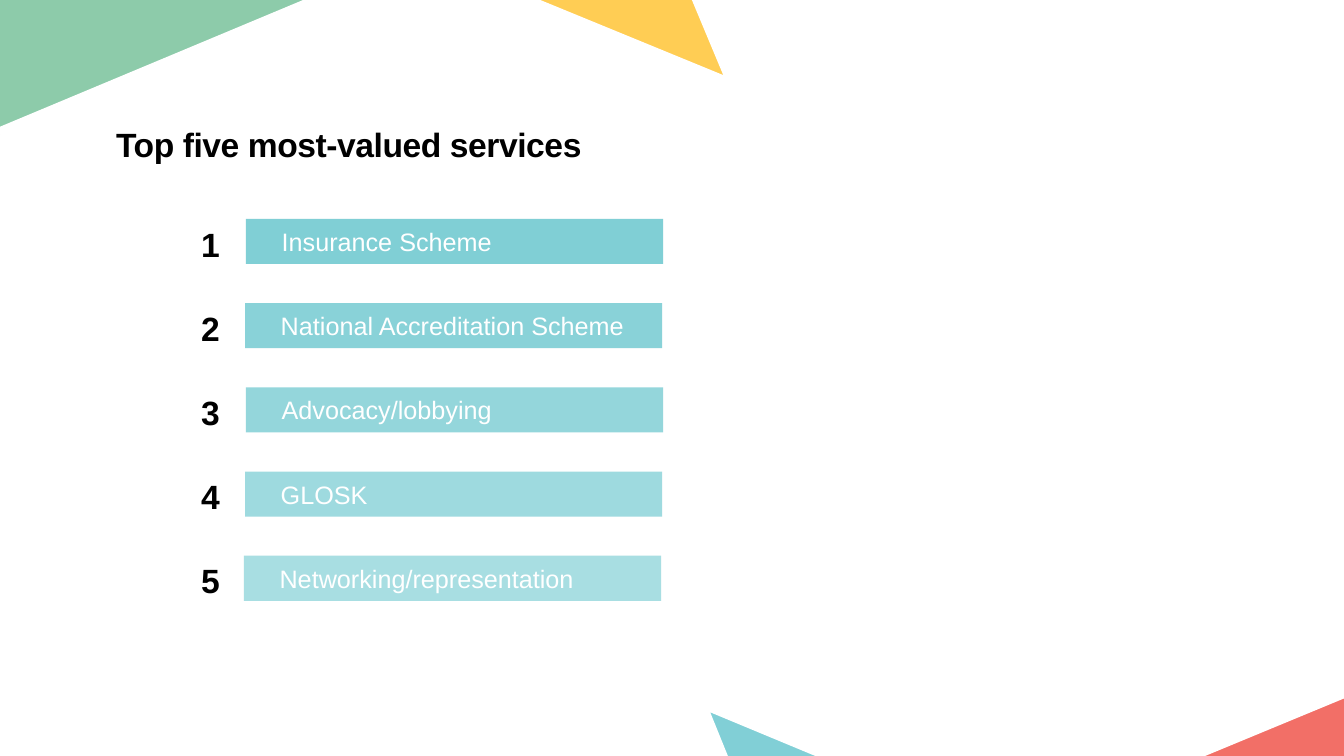
from dataclasses import dataclass
from typing import Any

from lxml.etree import SubElement
from pptx import Presentation
from pptx.dml.color import RGBColor
from pptx.enum.shapes import MSO_SHAPE as Preset
from pptx.enum.text import MSO_ANCHOR as Anchor
from pptx.enum.text import MSO_AUTO_SIZE as Fit
from pptx.enum.text import PP_ALIGN as Align
from pptx.oxml.ns import qn
from pptx.shapes.autoshape import Shape
from pptx.slide import Slide
from pptx.util import Pt

BLACK = RGBColor(0x00, 0x00, 0x00)
WHITE = RGBColor(0xFF, 0xFF, 0xFF)
GREEN = RGBColor(0x8D, 0xCB, 0xAA)
YELLOW = RGBColor(0xFF, 0xCD, 0x54)
TEAL = RGBColor(0x81, 0xCF, 0xD6)
RED = RGBColor(0xF2, 0x6F, 0x67)
BAR = RGBColor(0x80, 0xCF, 0xD5)

Point = tuple[float, float]


@dataclass(frozen=True)
class Corner:
    """A triangle; its first `edge` points carry a white outline."""
    fill: RGBColor
    points: list[Point]
    edge: int
    weight: float


@dataclass(frozen=True)
class Service:
    name: str
    left: float


CORNERS = [
    Corner(GREEN, [(0, 95.8), (236.2, -3), (0, -3)], 2, 9.69),
    Corner(YELLOW, [(365.8, -3), (525.6, 62.6), (498.2, -3)], 3, 9.69),
    Corner(TEAL, [(607.7, 544.3), (496.8, 498.2), (515.5, 544.3)], 3, 11.54),
    Corner(RED, [(960.5, 492.5), (838.8, 542.9), (960.5, 542.9)], 2, 11.54),
]
SERVICES = [
    Service("Insurance Scheme", 175.7),
    Service("National Accreditation Scheme", 175),
    Service("Advocacy/lobbying", 175.7),
    Service("GLOSK", 175),
    Service("Networking/representation", 174.2),
]

TOP, STEP, FADE = 156.4, 60.15, 8  # first bar, row pitch, opacity drop per row

HEAD = {"name": "Arial", "size": Pt(24), "bold": True}
LABEL = {"name": "Arial", "size": Pt(18), "bold": False}
HEAD_BOX = {"margin_left": 0, "margin_top": Pt(0.7), "margin_right": 0,
            "margin_bottom": 0, "vertical_anchor": Anchor.TOP,
            "word_wrap": True, "auto_size": Fit.NONE}
BAR_BOX = {"margin_left": Pt(25.5), "margin_right": Pt(7.2),
           "margin_top": Pt(3.6), "margin_bottom": Pt(3.6),
           "vertical_anchor": Anchor.MIDDLE, "word_wrap": True}
HEAD_PARA = {"alignment": Align.LEFT, "space_before": Pt(0.7)}
BAR_PARA = {"alignment": Align.LEFT}


def apply(target: Any, values: dict[str, Any]) -> None:
    for key, value in values.items():
        setattr(target, key, value)


def write(shape: Shape, text: str, box: dict, para: dict, font: dict,
          color: RGBColor) -> None:
    frame = shape.text_frame
    apply(frame, box)
    line = frame.paragraphs[0]
    apply(line, para)
    run = line.add_run()
    run.text = text
    apply(run.font, font)
    run.font.color.rgb = color


def write_head(shape: Shape, text: str) -> None:
    write(shape, text, HEAD_BOX, HEAD_PARA, HEAD, BLACK)
    line = shape.text_frame.paragraphs[0]
    line._p.get_or_add_pPr().set("marL", str(Pt(0.9)))
    line.runs[0]._r.get_or_add_rPr().set("spc", "-30")


def outline(slide: Slide, points: list[Point], close: bool) -> Shape:
    spots = [(Pt(x), Pt(y)) for x, y in points]
    path = slide.shapes.build_freeform(*spots[0])
    path.add_line_segments(spots[1:], close=close)
    shape = path.convert_to_shape()
    shape.shadow.inherit = False
    return shape


def draw_corner(slide: Slide, corner: Corner) -> None:
    body = outline(slide, corner.points, True)
    body.fill.solid()
    body.fill.fore_color.rgb = corner.fill
    body.line.fill.background()

    edge = outline(slide, corner.points[:corner.edge], False)
    edge.fill.background()
    edge.line.color.rgb = WHITE
    edge.line.width = Pt(corner.weight)


def draw_bar(slide: Slide, row: int, item: Service) -> None:
    bar = slide.shapes.add_shape(Preset.RECTANGLE, Pt(item.left),
                                 Pt(TOP + row * STEP), Pt(298), Pt(32.2))
    bar.shadow.inherit = False
    bar.fill.solid()
    bar.fill.fore_color.rgb = BAR
    bar.line.fill.background()
    if row:
        tint = bar._element.spPr.find(f"{qn('a:solidFill')}/{qn('a:srgbClr')}")
        SubElement(tint, qn("a:alpha")).set("val", str((100 - FADE * row) * 1000))
    write(bar, item.name, BAR_BOX, BAR_PARA, LABEL, WHITE)


def draw_rank(slide: Slide, row: int) -> None:
    box = slide.shapes.add_textbox(Pt(142.8), Pt(TOP + 2.5 + row * STEP),
                                   Pt(21), Pt(29.5))
    write_head(box, str(row + 1))


def main() -> None:
    deck = Presentation()
    apply(deck, {"slide_width": Pt(960), "slide_height": Pt(540)})
    slide = deck.slides.add_slide(deck.slide_layouts[5])

    # Corner triangles
    for corner in CORNERS:
        draw_corner(slide, corner)

    # Title
    title = slide.shapes.title
    apply(title, {"left": Pt(82), "top": Pt(87.8),
                  "width": Pt(373), "height": Pt(29.5)})
    write_head(title, "Top five most-valued services")

    # Ranked services
    for row, item in enumerate(SERVICES):
        draw_bar(slide, row, item)
        draw_rank(slide, row)

    deck.save("out.pptx")


if __name__ == "__main__":
    main()
